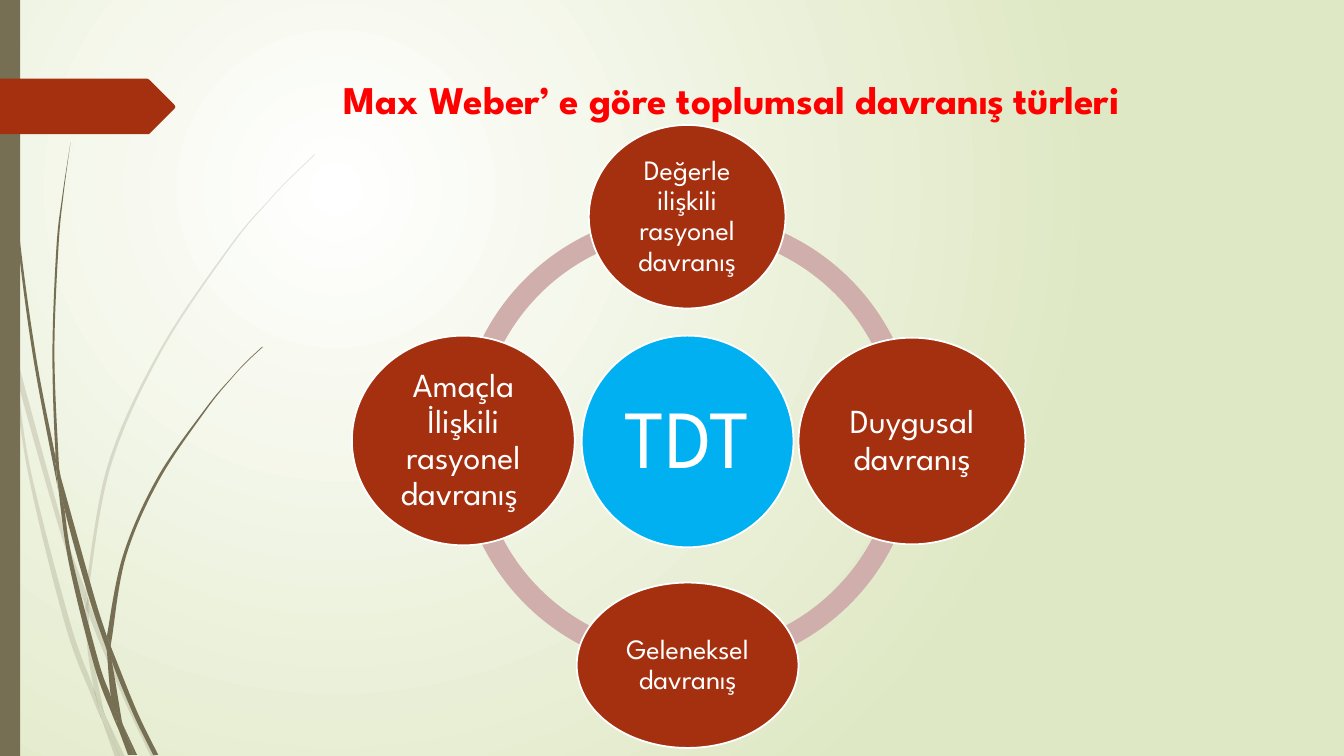
"""Build the slide on Weber's types of social action."""
from lxml import etree
from pptx import Presentation
from pptx.dml.color import RGBColor
from pptx.enum.shapes import MSO_SHAPE
from pptx.enum.text import MSO_ANCHOR, PP_ALIGN
from pptx.oxml.ns import qn
from pptx.util import Inches, Pt

RECTANGLE, ELLIPSE = MSO_SHAPE.RECTANGLE, MSO_SHAPE.OVAL
BLOCK_ARC = MSO_SHAPE.BLOCK_ARC
CENTER, TOP, MIDDLE = PP_ALIGN.CENTER, MSO_ANCHOR.TOP, MSO_ANCHOR.MIDDLE
FONT = "League Spartan"
COLORS = {
    "glow": "FFFFFF", "meadow": "DFE8C4", "olive": "766F54", "rust": "A53010",
    "ring": "CFAEAB", "hub": "00B0F0", "white": "FFFFFF", "title": "FF0000",
}
QUARTER_TURN = 54
INSCRIBED = 0.707

# Each blade part is a pair of smooth edges, one down and one back.
FAINT_BLADES = [
    ([(0.11, 3.5), (0.09, 3.22), (0, 2.82)], [(0, 2.99), (0.1, 3.44)]),
    ([(0.14, 3.45), (0.17, 3.76), (0.58, 5.22), (0.84, 5.99)],
     [(0.85, 5.86), (0.62, 5.2), (0.14, 3.45)]),
    ([(0.88, 5.96), (0.88, 6.1), (1.23, 6.94), (1.5, 7.51)],
     [(1.55, 7.51), (1.27, 6.92), (0.92, 6.07), (0.88, 5.96)]),
    ([(1.19, 7.51), (1.24, 7.51)], [(1.05, 7.11)]),
    ([(0.11, 3.5), (0.28, 4.7), (0.65, 6.21), (0.92, 6.93), (1.01, 7.14)],
     [(0.99, 7.07), (0.93, 6.83), (0.7, 6.19), (0.31, 4.69), (0.17, 3.76)]),
    ([(0.84, 5.99), (0.87, 6.46), (0.93, 6.83), (0.96, 6.92), (1.05, 7.11)],
     [(1.03, 7.06), (0.91, 6.46), (0.88, 6.1), (0.88, 6.08)]),
    ([(3.12, 1.53), (2.89, 1.75), (2.68, 1.97), (2.28, 2.44), (1.58, 3.48),
      (1.07, 4.61), (0.85, 5.84)],
     [(0.88, 5.96), (0.88, 5.84), (1.1, 4.62), (1.6, 3.49), (2.29, 2.45),
      (2.68, 1.98), (2.9, 1.75), (3.12, 1.54)]),
    ([(1.01, 7.14), (1.14, 7.51)], [(1.19, 7.51), (1.01, 7.14)]),
    ([(0.85, 5.86), (0.84, 5.99), (0.88, 6.08)], [(0.88, 6.1), (0.88, 5.96)]),
    ([(0.93, 6.83), (0.99, 7.07), (1.01, 7.14), (1.19, 7.51)],
     [(1.19, 7.51), (1.05, 7.11), (0.96, 6.92)]),
]
DARK_BLADES = [
    ([(0.03, 0), (0.04, 0.48), (0.07, 1.1), (0.17, 2.33), (0.33, 3.55),
      (0.56, 4.77), (0.57, 4.81)],
     [(0.55, 4.57), (0.55, 4.53), (0.36, 3.55), (0.19, 2.32), (0.08, 1.09),
      (0.05, 0.48), (0.04, 0)]),
    ([(0.6, 4.72), (0.64, 5.05), (0.88, 5.92), (1.06, 6.45)],
     [(1.06, 6.33), (1.06, 6.31), (0.93, 5.9), (0.6, 4.72)]),
    ([(1.1, 6.41), (1.11, 6.56), (1.32, 7.08), (1.52, 7.49)],
     [(1.57, 7.49), (1.36, 7.06), (1.13, 6.49), (1.1, 6.41)]),
    ([(0.57, 4.77), (0.68, 5.57), (0.93, 6.59), (1.11, 7.08), (1.17, 7.22)],
     [(1.16, 7.17), (1.1, 6.91), (0.98, 6.57), (0.72, 5.56), (0.64, 5.05)]),
    ([(0.7, 1.41), (0.62, 1.93), (0.56, 2.45), (0.52, 3.49), (0.55, 4.49),
      (0.6, 4.72)],
     [(0.6, 4.72), (0.58, 4.53), (0.54, 3.49), (0.58, 2.45), (0.63, 1.93),
      (0.7, 1.41)]),
    ([(1.33, 7.49), (1.36, 7.49)], [(1.22, 7.19)]),
    ([(0.55, 4.49), (0.55, 4.53), (0.57, 4.77), (0.64, 5.05)],
     [(0.6, 4.72), (0.6, 4.72)]),
    ([(2.6, 3.44), (2.45, 3.58), (2.31, 3.73), (2.04, 4.05), (1.56, 4.74),
      (1.22, 5.51), (1.06, 6.31)],
     [(1.1, 6.41), (1.11, 6.33), (1.25, 5.52), (1.58, 4.76), (2.05, 4.06),
      (2.31, 3.74), (2.45, 3.59), (2.61, 3.44)]),
    ([(1.17, 7.22), (1.27, 7.49)], [(1.31, 7.49), (1.17, 7.22)]),
    ([(1.06, 6.45), (1.1, 6.91), (1.16, 7.06), (1.22, 7.19)],
     [(1.21, 7.16), (1.11, 6.56), (1.09, 6.51)]),
    ([(1.06, 6.31), (1.06, 6.33), (1.06, 6.45), (1.09, 6.51), (1.11, 6.56)],
     [(1.1, 6.41), (1.06, 6.31)]),
    ([(1.1, 6.91), (1.16, 7.17), (1.17, 7.22), (1.3, 7.49)],
     [(1.33, 7.49), (1.22, 7.19), (1.16, 7.06)]),
]
TAG_CORNERS = [(0, 0.78), (1.46, 0.78), (1.48, 0.79), (1.73, 1.04), (1.74, 1.06),
               (1.73, 1.08), (1.48, 1.33), (1.46, 1.33), (0, 1.33)]
TYPES = [
    ("Değerle ilişkili rasyonel davranış", (5.84, 1.24, 1.95, 1.82), 20),
    ("Duygusal davranış", (7.92, 3.35, 2.25, 2.05), 24),
    ("Geleneksel davranış", (5.72, 5.78, 2.2, 1.64), 20),
    ("Amaçla İlişkili rasyonel davranış ", (3.49, 3.33, 2.21, 2.08), 24),
]


def rgb(name):
    """Return the named colour."""
    return RGBColor.from_string(COLORS[name])


def paint(shape, color, outline=None):
    """Give a shape a plain fill and an optional outline."""
    shape.shadow.inherit = False
    shape.fill.solid()
    shape.fill.fore_color.rgb = rgb(color)
    if outline:
        shape.line.color.rgb = rgb(outline)
        shape.line.width = Pt(1.25)
    else:
        shape.line.fill.background()


def add_block(slide, kind, box, color, outline=None):
    """Add a painted preset shape."""
    shape = slide.shapes.add_shape(kind, *map(Inches, box))
    paint(shape, color, outline)
    return shape


def add_text(slide, box, text, size, color="white", bold=False, anchor=MIDDLE,
             inset=0.03, spacing=0.9):
    """Add a box of centred text."""
    frame = slide.shapes.add_textbox(*map(Inches, box)).text_frame
    frame.word_wrap = True
    frame.vertical_anchor = anchor
    frame.margin_left = frame.margin_right = Inches(inset)
    frame.margin_top = frame.margin_bottom = Inches(inset)
    paragraph = frame.paragraphs[0]
    paragraph.alignment = CENTER
    paragraph.line_spacing = spacing
    run = paragraph.add_run()
    run.text = text
    run.font.name = FONT
    run.font.size = Pt(size)
    run.font.bold = bold
    run.font.color.rgb = rgb(color)


def bezier_points(edge):
    """Return two controls and an end for each step of a smooth edge."""
    padded = [edge[0], *edge, edge[-1]]
    points = []
    for before, start, end, after in zip(padded, padded[1:], padded[2:], padded[3:]):
        points.append([s + (e - b) / 6 for b, s, e in zip(before, start, end)])
        points.append([e - (a - s) / 6 for s, e, a in zip(start, end, after)])
        points.append(end)
    return points


def add_outline(slide, edges, color, opacity=100):
    """Add a closed outline of smooth edges joined by straight steps."""
    points = [edges[0][0]]
    for edge in edges:
        if points[-1] != edge[0]:
            points += bezier_points([points[-1], edge[0]])
        points += bezier_points(edge)
    corners = [(Inches(x), Inches(y)) for x, y in points]
    builder = slide.shapes.build_freeform(*corners[0])
    builder.add_line_segments(corners[1:], close=True)
    shape = builder.convert_to_shape()
    paint(shape, color)
    steps = list(shape._element.iter(qn("a:lnTo")))
    for first, second, third in zip(steps[::3], steps[1::3], steps[2::3]):
        curve = etree.Element(qn("a:cubicBezTo"))
        first.addprevious(curve)
        for step in (first, second, third):
            curve.append(step[0])
            step.getparent().remove(step)
    if opacity < 100:
        fill_color = shape._element.spPr.find(qn("a:solidFill"))[0]
        etree.SubElement(fill_color, qn("a:alpha")).set("val", str(opacity * 1000))


def set_background(slide):
    """Fill the background with a glow around the upper left."""
    fill = slide.background.fill
    fill.gradient()
    for stop, name in zip(fill.gradient_stops, ("glow", "meadow")):
        stop.color.rgb = rgb(name)
    gradient = slide._element.find(".//" + qn("a:gradFill"))
    gradient.remove(gradient.find(qn("a:lin")))
    glow = etree.Element(qn("a:path"), {"path": "circle"})
    gradient.find(qn("a:gsLst")).addnext(glow)
    etree.SubElement(glow, qn("a:fillToRect"),
                     {"l": "50000", "t": "50000", "r": "100000", "b": "100000"})


def add_cycle(slide):
    """Add the ring, its hub and the four types of action."""
    for quarter in (2, 1, 0, 3):
        arc = add_block(slide, BLOCK_ARC, (4.54, 2.1, 4.56, 4.56), "ring")
        arc.adjustments[0] = QUARTER_TURN * quarter
        arc.adjustments[1] = QUARTER_TURN * ((quarter + 1) % 4)
        arc.adjustments[2] = 0.046
    add_disc(slide, "TDT", (5.77, 3.33, 2.1, 2.1), 59, "hub", inset=0.08)
    for text, box, size in TYPES:
        add_disc(slide, text, box, size, "rust")


def add_disc(slide, text, box, size, color, inset=0.03):
    """Add an ellipse with text in its inscribed rectangle."""
    add_block(slide, ELLIPSE, box, color, "white")
    left, top, width, height = box
    margin = (1 - INSCRIBED) / 2
    inner = (left + width * margin, top + height * margin,
             width * INSCRIBED, height * INSCRIBED)
    add_text(slide, inner, text, size, inset=inset)


def main():
    """Build and save the slide."""
    presentation = Presentation()
    presentation.slide_width, presentation.slide_height = Inches(13.33), Inches(7.5)
    slide = presentation.slides.add_slide(presentation.slide_layouts[6])
    set_background(slide)
    for blades, opacity in ((FAINT_BLADES, 20), (DARK_BLADES, 100)):
        for edges in blades:
            add_outline(slide, edges, "olive", opacity)
    add_block(slide, RECTANGLE, (0, 0, 0.2, 7.5), "olive")
    add_outline(slide, [[corner] for corner in TAG_CORNERS], "rust")
    add_text(slide, (2.38, 0.7, 9.75, 1.4), "Max Weber’ e göre toplumsal davranış türleri",
             28, color="title", bold=True, anchor=TOP, inset=0.05, spacing=1)
    add_cycle(slide)
    presentation.save("out.pptx")


if __name__ == "__main__":
    main()
